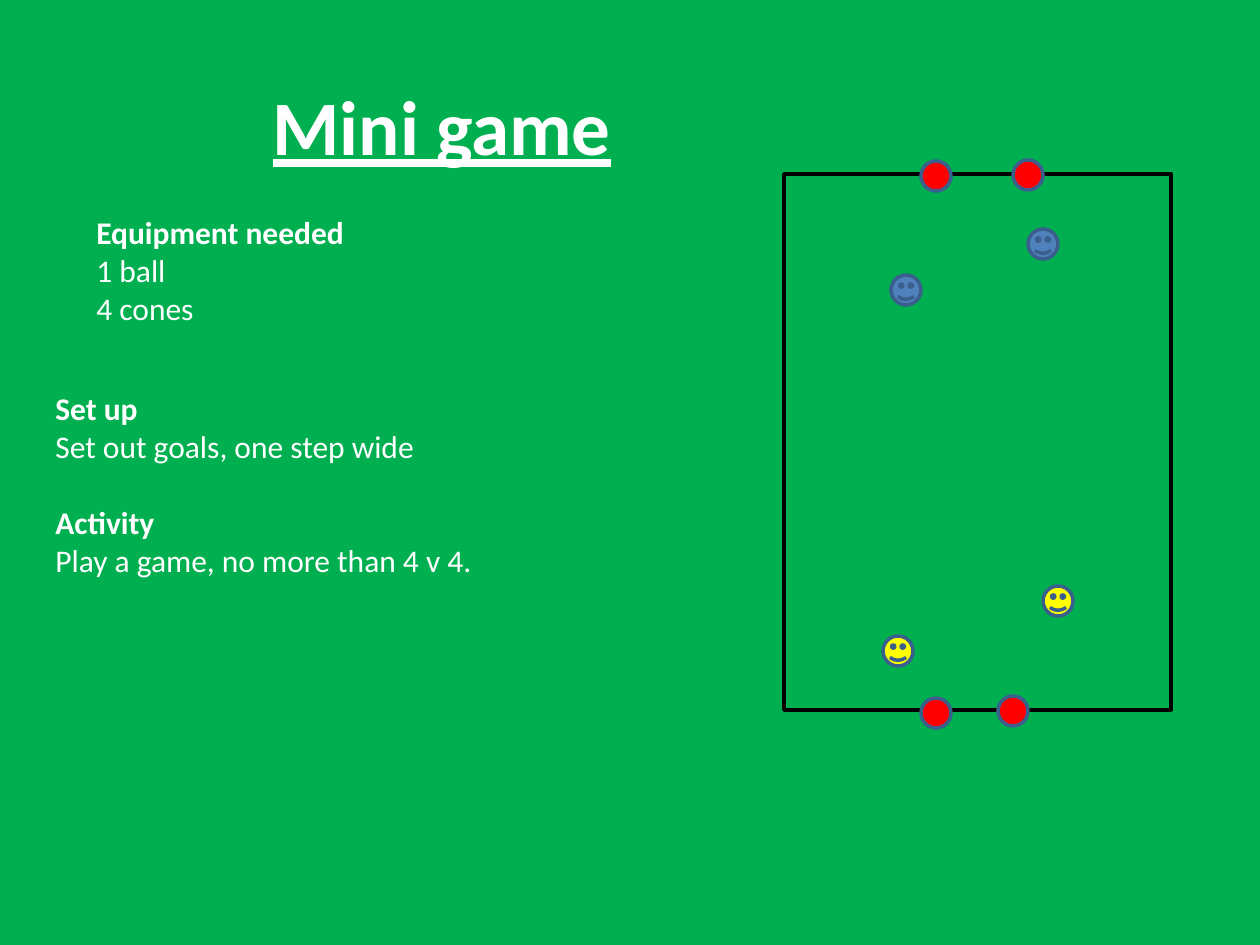
"""Build the mini game slide: instructions beside a small pitch diagram."""
from dataclasses import dataclass

from pptx import Presentation
from pptx.dml.color import RGBColor as RGB
from pptx.enum.shapes import MSO_SHAPE as SHAPE
from pptx.enum.text import MSO_ANCHOR as ANCHOR, PP_ALIGN as ALIGN
from pptx.util import Emu, Pt


@dataclass(frozen=True)
class Theme:
    font: str = "Calibri"
    grass: str = "00B050"
    text: str = "FFFFFF"
    pitch_line: str = "000000"
    marker_line: str = "3A5F8C"
    cone: str = "FF0000"
    blue_team: str = "4F81BD"
    yellow_team: str = "FFFF00"
    title_pt: int = 44
    body_pt: int = 18
    gap_pt: int = 22
    line_pt: int = 2
    marker_px: int = 30


class Deck:
    PX = 914400 / 126

    def __init__(self, theme):
        self.theme = theme
        self.prs = Presentation()
        self.prs.slide_width, self.prs.slide_height = self.px(1260, 945)
        self.s = self.prs.slides.add_slide(self.prs.slide_layouts[6])
        fill = self.s.background.fill
        fill.solid()
        fill.fore_color.rgb = RGB.from_string(theme.grass)

    def px(self, *lengths):
        return [Emu(round(n * self.PX)) for n in lengths]

    def run(self, p, text, size, bold=False, underline=False):
        r = p.add_run()
        r.text = text
        f = r.font
        f.name, f.size, f.bold, f.underline = self.theme.font, Pt(size), bold, underline
        f.color.rgb = RGB.from_string(self.theme.text)

    def frame(self, *box):
        tf = self.s.shapes.add_textbox(*self.px(*box)).text_frame
        tf.word_wrap = True
        return tf

    def title(self, text, *box):
        tf = self.frame(*box)
        tf.vertical_anchor = ANCHOR.MIDDLE
        p = tf.paragraphs[0]
        p.alignment = ALIGN.CENTER
        self.run(p, text, self.theme.title_pt, bold=True, underline=True)

    def sections(self, sections, *box):
        tf = self.frame(*box)
        p = tf.paragraphs[0]
        for i, (heading, lines) in enumerate(sections):
            if i:
                p = tf.add_paragraph()
                p.space_before = Pt(self.theme.gap_pt)
            self.run(p, heading, self.theme.body_pt, bold=True)
            for line in lines:
                self.run(tf.add_paragraph(), line, self.theme.body_pt)

    def shape(self, kind, fill, line, *box):
        sp = self.s.shapes.add_shape(kind, *self.px(*box))
        sp.shadow.inherit = False
        sp.fill.solid()
        sp.fill.fore_color.rgb = RGB.from_string(fill)
        sp.line.color.rgb = RGB.from_string(line)
        sp.line.width = Pt(self.theme.line_pt)

    def markers(self, kind, fill, spots):
        size = self.theme.marker_px
        for x, y in spots:
            self.shape(kind, fill, self.theme.marker_line, x, y, size, size)


def main():
    t = Theme()
    deck = Deck(t)
    deck.title("Mini game", 44, 23, 796, 203)
    deck.sections([("Equipment needed", ["1 ball", "4 cones"])], 84, 207, 655, 204)
    deck.sections([
        ("Set up", ["Set out goals, one step wide"]),
        ("Activity", ["Play a game, no more than 4 v 4."]),
    ], 43, 383, 630, 357)
    deck.shape(SHAPE.RECTANGLE, t.grass, t.pitch_line, 784, 174, 387, 536)
    deck.markers(SHAPE.OVAL, t.cone, [(1013, 160), (921, 161), (998, 696), (921, 698)])
    deck.markers(SHAPE.SMILEY_FACE, t.blue_team, [(891, 275), (1028, 229)])
    deck.markers(SHAPE.SMILEY_FACE, t.yellow_team, [(883, 636), (1043, 586)])
    deck.prs.save("out.pptx")


if __name__ == "__main__":
    main()
